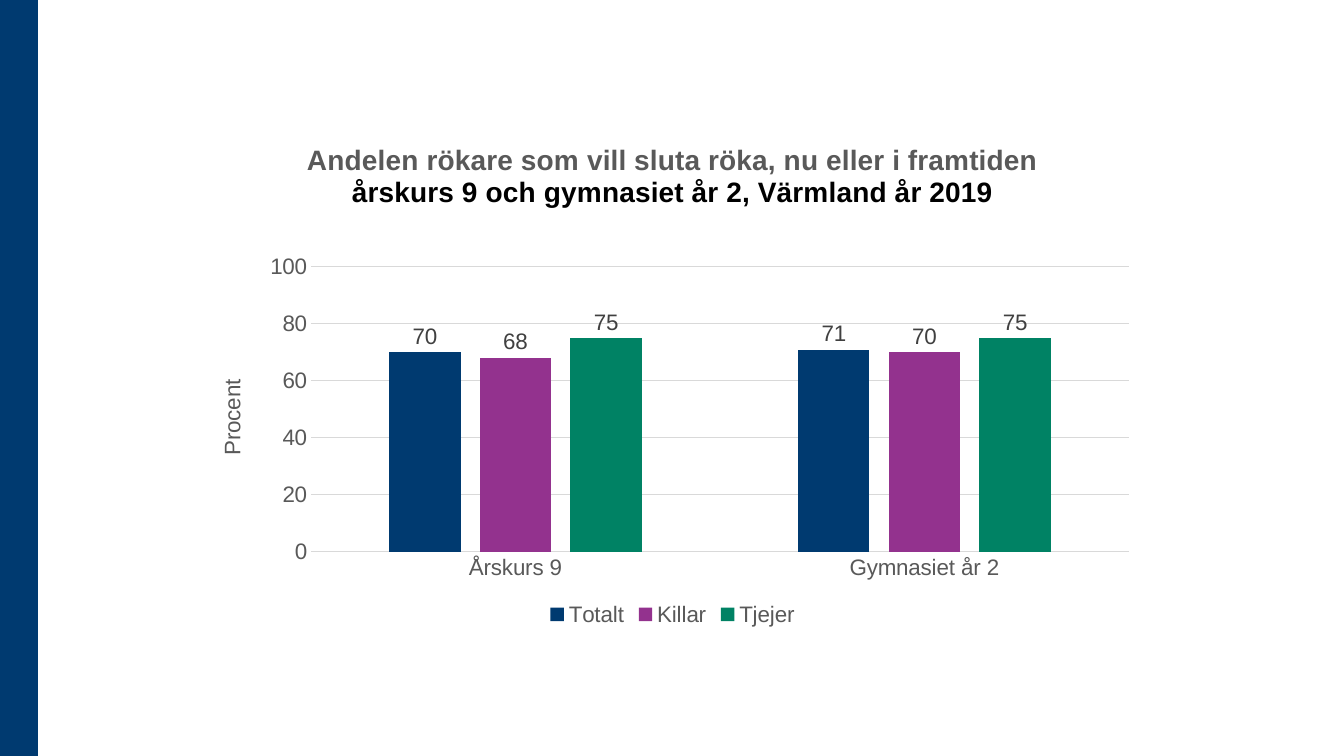
from lxml import etree
from pptx import Presentation
from pptx import util as u
from pptx.chart.data import CategoryChartData
from pptx.dml.color import RGBColor
from pptx.enum import chart as charts, shapes
from pptx.oxml.ns import qn

EMU_PER_PX = 914400 / 100.8
PAGE_WIDTH, PAGE_HEIGHT = 1344, 756
CHART_BOX = (196, 125, 953, 506)
PLOT_BOX = (311, 267, 818, 285)
NAVY, GREY, GRID = "003A70", "595959", "D9D9D9"
CATEGORIES = ["Årskurs 9", "Gymnasiet år 2"]
SERIES = [
    ("Totalt", (70, 71), NAVY),
    ("Killar", (68, 70), "93328E"),
    ("Tjejer", (75, 75), "008264"),
]
TITLE_LINES = [
    ("Andelen rökare som vill sluta röka, nu eller i framtiden", GREY),
    ("årskurs 9 och gymnasiet år 2, Värmland år 2019", "000000"),
]


def px(length):
    return u.Emu(round(length * EMU_PER_PX))


def colour(value):
    return RGBColor.from_string(value)


def set_font(font, size, value, bold=False):
    font.name = "Arial"
    font.size = u.Pt(size)
    font.bold = bold
    font.color.rgb = colour(value)


def set_line(line, value):
    line.color.rgb = colour(value)
    line.width = u.Pt(0.75)


def add_bar(page, left, top, width, height, fill):
    bar = page.shapes.add_shape(
        shapes.MSO_SHAPE.RECTANGLE, px(left), px(top), px(width), px(height))
    bar.shadow.inherit = False
    bar.fill.solid()
    bar.fill.fore_color.rgb = colour(fill)
    bar.line.fill.background()


def write_title(chart):
    frame = chart.chart_title.text_frame
    for index, (line, value) in enumerate(TITLE_LINES):
        para = frame.paragraphs[0] if index == 0 else frame.add_paragraph()
        para.add_run().text = line
        set_font(para.font, 20, value, bold=True)
    chart.chart_title.include_in_layout = False


def place_plot(chart):
    area = chart._chartSpace.chart.plotArea
    for old in area.findall(qn("c:layout")):
        area.remove(old)
    layout = etree.Element(qn("c:layout"))
    manual = etree.SubElement(layout, qn("c:manualLayout"))
    left, top, width, height = CHART_BOX
    plot_left, plot_top, plot_width, plot_height = PLOT_BOX
    settings = {
        "layoutTarget": "inner",
        "xMode": "edge",
        "yMode": "edge",
        "x": (plot_left - left) / width,
        "y": (plot_top - top) / height,
        "w": plot_width / width,
        "h": plot_height / height,
    }
    for name, value in settings.items():
        etree.SubElement(manual, qn("c:" + name)).set("val", str(value))
    area.insert(0, layout)


def style_axes(chart):
    for axis in (chart.category_axis, chart.value_axis):
        axis.major_tick_mark = charts.XL_TICK_MARK.NONE
        axis.minor_tick_mark = charts.XL_TICK_MARK.NONE
        set_font(axis.tick_labels.font, 16, GREY)
    set_line(chart.category_axis.format.line, GRID)
    values = chart.value_axis
    values.minimum_scale, values.maximum_scale, values.major_unit = 0, 100, 20
    values.format.line.fill.background()
    set_line(values.major_gridlines.format.line, GRID)
    frame = values.axis_title.text_frame
    frame.text = "Procent"
    set_font(frame.paragraphs[0].font, 16, GREY)
    body = frame._txBody.bodyPr
    body.set("rot", "-5400000")
    body.set("vert", "horz")


def style_series(plot):
    plot.gap_width = 219
    plot.overlap = -27
    plot.vary_by_categories = False
    for series, (_, _, fill) in zip(plot.series, SERIES):
        series.format.fill.solid()
        series.format.fill.fore_color.rgb = colour(fill)
        labels = series.data_labels
        labels.show_value = True
        labels.position = charts.XL_LABEL_POSITION.OUTSIDE_END
        set_font(labels.font, 16, "404040")


def add_column_chart(page):
    data = CategoryChartData(number_format="0")
    data.categories = CATEGORIES
    for name, values, _ in SERIES:
        data.add_series(name, values)
    chart = page.shapes.add_chart(
        charts.XL_CHART_TYPE.COLUMN_CLUSTERED,
        *(px(length) for length in CHART_BOX), data).chart
    set_font(chart.font, 16, "000000")
    write_title(chart)
    chart.has_legend = True
    chart.legend.position = charts.XL_LEGEND_POSITION.BOTTOM
    chart.legend.include_in_layout = False
    set_font(chart.legend.font, 16, GREY)
    style_axes(chart)
    style_series(chart.plots[0])
    place_plot(chart)


def main():
    deck = Presentation()
    deck.slide_width, deck.slide_height = px(PAGE_WIDTH), px(PAGE_HEIGHT)
    page = deck.slides.add_slide(deck.slide_layouts[6])
    add_bar(page, 0, 0, 38, PAGE_HEIGHT, NAVY)
    add_column_chart(page)
    deck.save("out.pptx")


if __name__ == "__main__":
    main()
